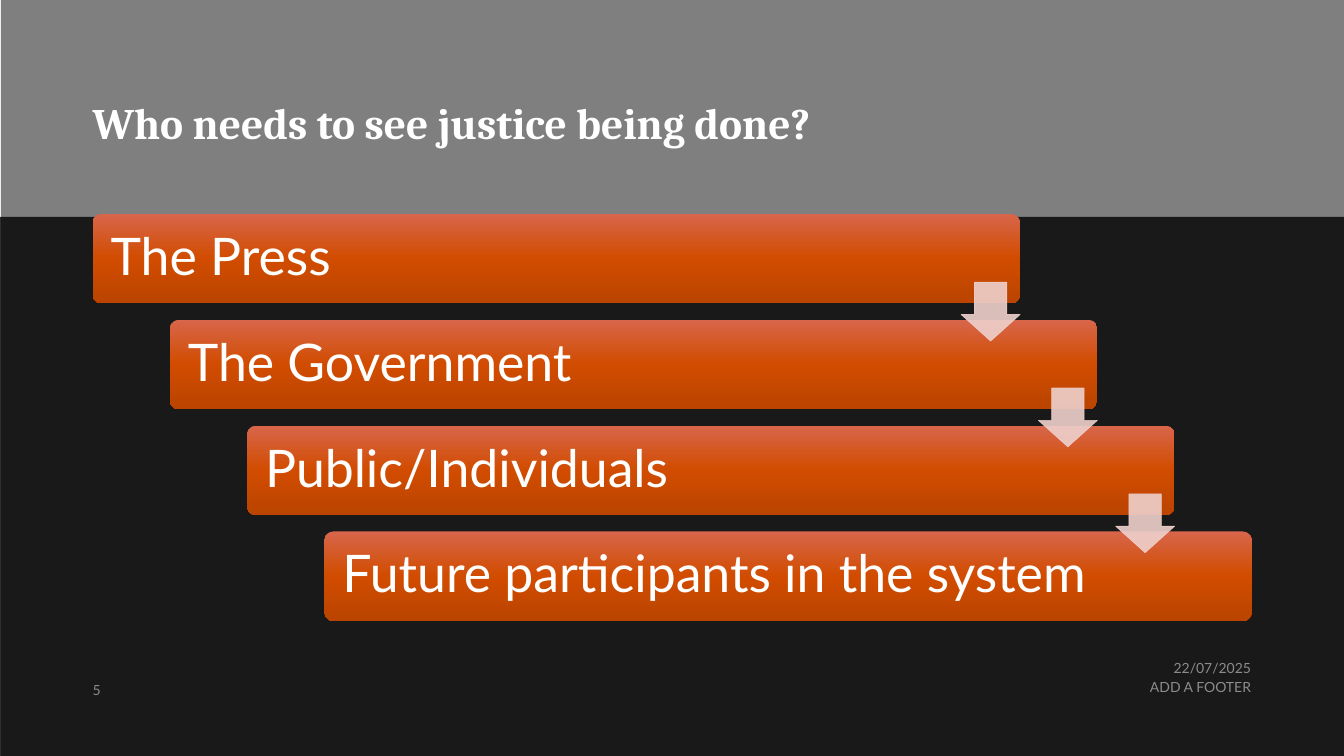
"""Builds a slide with a descending staircase of people who need to see justice done."""
from copy import deepcopy

from lxml.etree import SubElement
from pptx import Presentation
from pptx.dml.color import RGBColor
from pptx.enum.shapes import MSO_SHAPE
from pptx.enum.text import MSO_ANCHOR, MSO_AUTO_SIZE, PP_ALIGN
from pptx.oxml.ns import qn
from pptx.util import Pt

BLACK = RGBColor(0x00, 0x00, 0x00)
WHITE = RGBColor(0xFF, 0xFF, 0xFF)
FOOTER_GREY = RGBColor(0xD9, 0xD9, 0xD9)
ARROW_PINK = RGBColor(0xEE, 0xD0, 0xCC)
CARD_STOPS = (
    (0, RGBColor(0xD8, 0x66, 0x4B)),
    (0.5, RGBColor(0xD1, 0x4C, 0x00)),
    (1, RGBColor(0xBA, 0x44, 0x00)),
)

PAGE_WIDTH, PAGE_HEIGHT = 960, 540
BAND_BOTTOM = 155
CARD_LEFT, CARD_TOP = 66.2, 152.8
CARD_WIDTH, CARD_HEIGHT = 662.4, 64
STEP_RIGHT, STEP_DOWN = 55.2, 75.6
ARROW_SIZE, ARROW_DROP = 42, 48.8
AUDIENCES = (
    "The Press",
    "The Government",
    "Public/Individuals",
    "Future participants in the system",
)


def fade(shape, opacity):
    """Set the opacity, in percent, of every colour in a shape."""
    for color in shape._element.iter(qn("a:srgbClr")):
        SubElement(color, qn("a:alpha"), val=str(opacity * 1000))


def add_plain_shape(page, kind, left, top, width, height):
    """Add a preset shape without shadow or outline."""
    shape = page.shapes.add_shape(kind, Pt(left), Pt(top), Pt(width), Pt(height))
    shape.shadow.inherit = False
    shape.line.fill.background()
    return shape


def add_shade(page, left, top, height, opacity):
    """Add a translucent black panel across the page."""
    shade = add_plain_shape(page, MSO_SHAPE.RECTANGLE, left, top, PAGE_WIDTH, height)
    shade.fill.solid()
    shade.fill.fore_color.rgb = BLACK
    fade(shade, opacity)


def write(box, text, font_name, size, color, anchor, margin=0, align=PP_ALIGN.LEFT):
    """Fill a shape with one formatted paragraph."""
    frame = box.text_frame
    frame.word_wrap = True
    frame.auto_size = MSO_AUTO_SIZE.NONE
    frame.vertical_anchor = anchor
    frame.margin_left = frame.margin_right = Pt(margin)
    frame.margin_top = frame.margin_bottom = Pt(0)
    frame.text = text
    para = frame.paragraphs[0]
    para.alignment = align
    para.line_spacing = 0.9
    para.font.name = font_name
    para.font.size = Pt(size)
    para.font.color.rgb = color
    return para


def add_title(page, text):
    """Place and format the title."""
    title = page.shapes.title
    title.left, title.top, title.width, title.height = Pt(66.2), Pt(63.4), Pt(540), Pt(43.2)
    para = write(title, text, "Cambria", 31, WHITE, MSO_ANCHOR.BOTTOM)
    para.font.bold = True


def add_footer(page, text, left, top, width, height, align, anchor=MSO_ANCHOR.TOP):
    """Add a small faded footer text."""
    box = page.shapes.add_textbox(Pt(left), Pt(top), Pt(width), Pt(height))
    para = write(box, text, "Lato", 10, FOOTER_GREY, anchor, align=align)
    para.line_spacing = 1.0 if anchor == MSO_ANCHOR.BOTTOM else 0.9
    fade(box, 60)


def fill_gradient(shape):
    """Give a shape the vertical orange gradient."""
    shape.fill.gradient()
    shape.fill.gradient_angle = 270
    stop_list = next(shape._element.iter(qn("a:gsLst")))
    stop_list.append(deepcopy(stop_list[0]))
    for stop, (position, color) in zip(shape.fill.gradient_stops, CARD_STOPS):
        stop.position = position
        stop.color.rgb = color


def add_card(page, text, left, top):
    """Add one labelled step of the staircase."""
    card = add_plain_shape(page, MSO_SHAPE.ROUNDED_RECTANGLE, left, top, CARD_WIDTH, CARD_HEIGHT)
    card.adjustments[0] = 0.1
    fill_gradient(card)
    write(card, text, "Lato", 37, WHITE, MSO_ANCHOR.MIDDLE, margin=11)


def add_arrow(page, left, top):
    """Add a down arrow that leads to the next step."""
    arrow = add_plain_shape(page, MSO_SHAPE.DOWN_ARROW, left, top, ARROW_SIZE, ARROW_SIZE)
    arrow.adjustments[0] = 0.55
    arrow.adjustments[1] = 0.45
    arrow.fill.solid()
    arrow.fill.fore_color.rgb = ARROW_PINK
    arrow.line.color.rgb = ARROW_PINK
    arrow.line.width = Pt(0.5)
    fade(arrow, 90)


def add_staircase(page):
    """Add the cards, then the arrows between them."""
    corners = [
        (CARD_LEFT + index * STEP_RIGHT, CARD_TOP + index * STEP_DOWN)
        for index in range(len(AUDIENCES))
    ]
    for audience, (left, top) in zip(AUDIENCES, corners):
        add_card(page, audience, left, top)
    for left, top in corners[:-1]:
        add_arrow(page, left + CARD_WIDTH - ARROW_SIZE, top + ARROW_DROP)


def main():
    """Build and save the deck."""
    deck = Presentation()
    deck.slide_width, deck.slide_height = Pt(PAGE_WIDTH), Pt(PAGE_HEIGHT)
    page = deck.slides.add_slide(deck.slide_layouts[5])
    add_shade(page, 0.7, 0, PAGE_HEIGHT, 50)
    add_shade(page, 0, BAND_BOTTOM, PAGE_HEIGHT - BAND_BOTTOM, 80)
    title = page.shapes.title._element
    title.getparent().append(title)
    add_title(page, "Who needs to see justice being done?")
    add_footer(page, "22/07/2025", 677.6, 472.3, 216, 11.5, PP_ALIGN.RIGHT)
    add_footer(page, "ADD A FOOTER", 569.6, 486, 324, 15, PP_ALIGN.RIGHT)
    add_footer(page, "5", 66.2, 484.6, 36, 14.4, PP_ALIGN.LEFT, MSO_ANCHOR.BOTTOM)
    add_staircase(page)
    deck.save("out.pptx")


if __name__ == "__main__":
    main()
